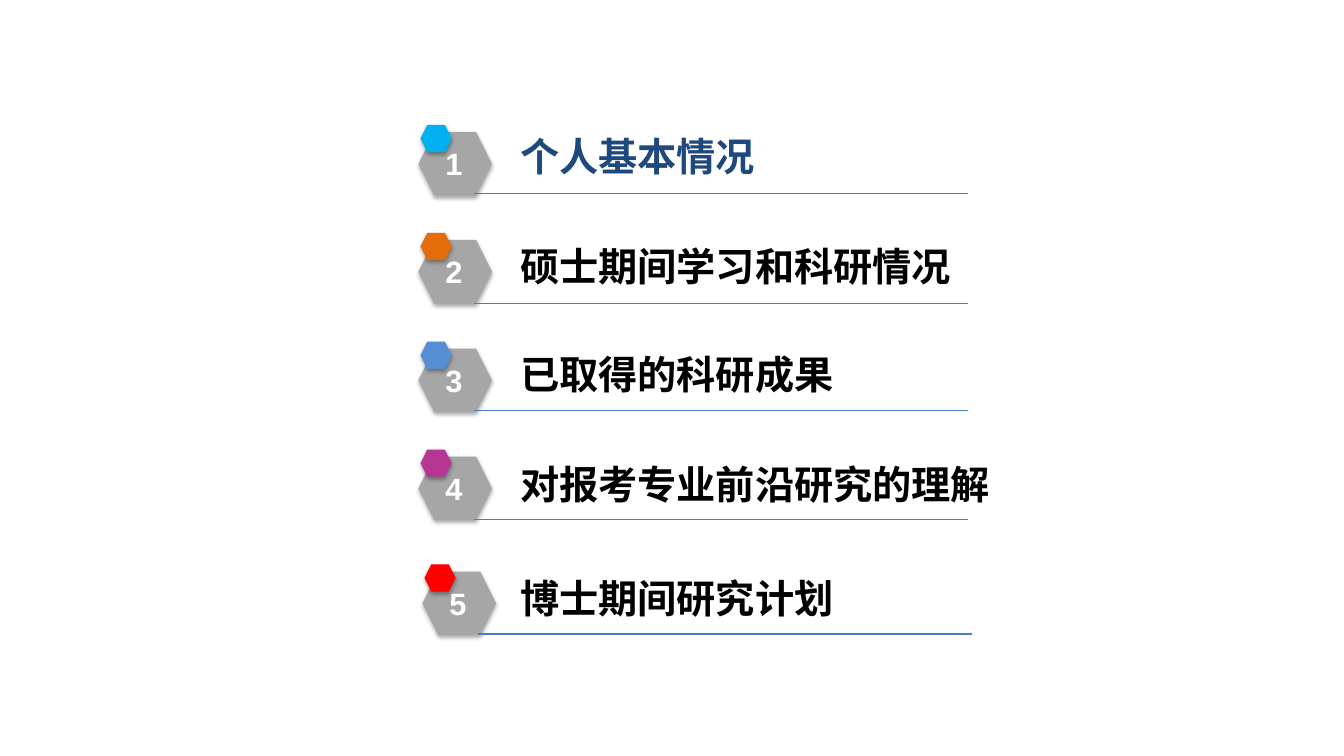
from lxml import etree
from pptx import Presentation
from pptx.dml.color import RGBColor
from pptx.enum.shapes import MSO_CONNECTOR, MSO_SHAPE
from pptx.enum.text import MSO_AUTO_SIZE
from pptx.oxml.ns import qn
from pptx.util import Inches, Pt

COLORS = {
    "badge": "A6A6A6", "number": "FFFFFF", "rule": "4B7EBC", "shadow": "000000",
    "current": "1F497D", "topic": "000000",
    "cyan": "00B0F0", "orange": "E46C0A", "blue": "558ED5", "purple": "B83693", "red": "FF0000",
}
# topic, topic colour, dot colour, badge left, badge top, topic top, rule height
AGENDA = [
    ("个人基本情况", "current", "cyan", 4.15, 1.24, 1.26, 1.92),
    ("硕士期间学习和科研情况", "topic", "orange", 4.15, 2.31, 2.35, 3.01),
    ("已取得的科研成果", "topic", "blue", 4.15, 3.39, 3.43, 4.07),
    ("对报考专业前沿研究的理解", "topic", "purple", 4.15, 4.46, 4.52, 5.15),
    ("博士期间研究计划", "topic", "red", 4.19, 5.60, 5.65, 6.29),
]
TOPIC_FORMAT = {"size": Pt(28), "bold": True, "name": "Noto Sans CJK SC"}
NUMBER_FORMAT = {"size": Pt(22), "bold": True, "name": "Arial"}


def rgb(color):
    return RGBColor.from_string(COLORS[color])


def add_text(shapes, text, box, color, font_format, wrap):
    frame = shapes.add_textbox(*map(Inches, box)).text_frame
    frame.word_wrap = wrap
    frame.auto_size = MSO_AUTO_SIZE.SHAPE_TO_FIT_TEXT
    run = frame.paragraphs[0].add_run()
    run.text = text
    for name, value in font_format.items():
        setattr(run.font, name, value)
    run.font.color.rgb = rgb(color)
    east_asian = etree.SubElement(run.font._element, qn("a:ea"))
    east_asian.set("typeface", font_format["name"])


def add_soft_shadow(shape):
    shape.shadow.inherit = False
    effects = shape._element.spPr.find(qn("a:effectLst"))
    shadow = etree.SubElement(effects, qn("a:outerShdw"), blurRad=str(Pt(3.1)),
                              dist=str(Pt(1.8)), dir="5400000", rotWithShape="0")
    color = etree.SubElement(shadow, qn("a:srgbClr"), val=COLORS["shadow"])
    etree.SubElement(color, qn("a:alpha"), val="35000")


def add_hexagon(shapes, box, color):
    hexagon = shapes.add_shape(MSO_SHAPE.HEXAGON, *map(Inches, box))
    hexagon.fill.solid()
    hexagon.fill.fore_color.rgb = rgb(color)
    hexagon.line.fill.background()
    add_soft_shadow(hexagon)


def add_badge(slide, number, left, top, dot_color):
    shapes = slide.shapes.add_group_shape().shapes
    add_hexagon(shapes, (left, top + 0.07, 0.73, 0.63), "badge")
    add_hexagon(shapes, (left + 0.02, top, 0.31, 0.27), dot_color)
    add_text(shapes, str(number), (left + 0.17, top + 0.15, 0.37, 0.47),
             "number", NUMBER_FORMAT, False)


def add_rule(slide, left, height):
    rule = slide.shapes.add_connector(MSO_CONNECTOR.STRAIGHT, Inches(left), Inches(height),
                                      Inches(left + 4.9), Inches(height))
    rule.line.color.rgb = rgb("rule")
    rule.line.width = Pt(0.75)
    etree.SubElement(rule._element.spPr, qn("a:effectLst"))


def main():
    presentation = Presentation()
    presentation.slide_width, presentation.slide_height = Inches(13.33), Inches(7.5)
    slide = presentation.slides.add_slide(presentation.slide_layouts[6])
    for number, row in enumerate(AGENDA, start=1):
        topic, topic_color, dot_color, left, badge_top, topic_top, rule_height = row
        add_text(slide.shapes, topic, (5.06, topic_top, 4.88, 0.57),
                 topic_color, TOPIC_FORMAT, True)
        add_badge(slide, number, left, badge_top, dot_color)
        add_rule(slide, left + 0.55, rule_height)
    presentation.save("out.pptx")


if __name__ == "__main__":
    main()
